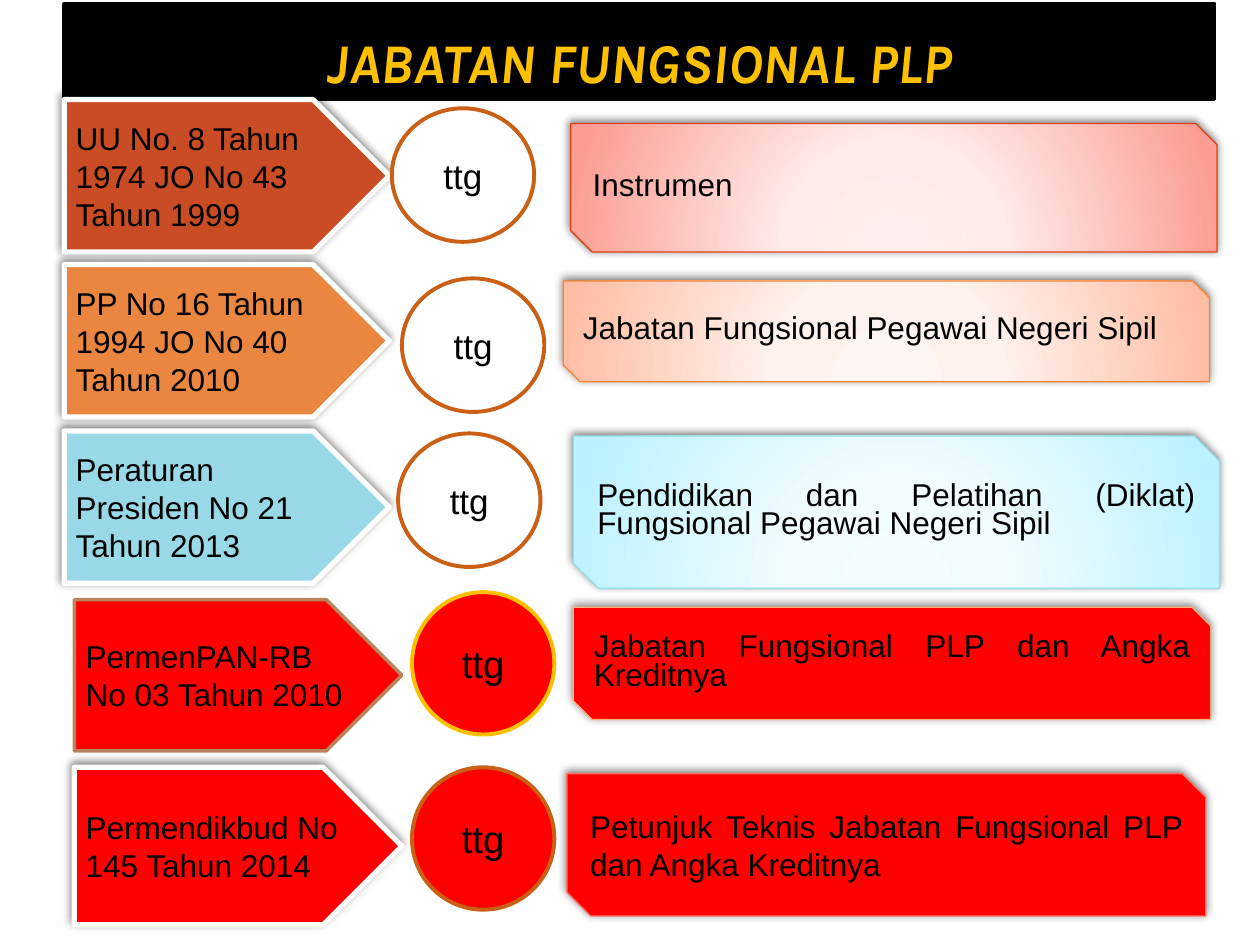
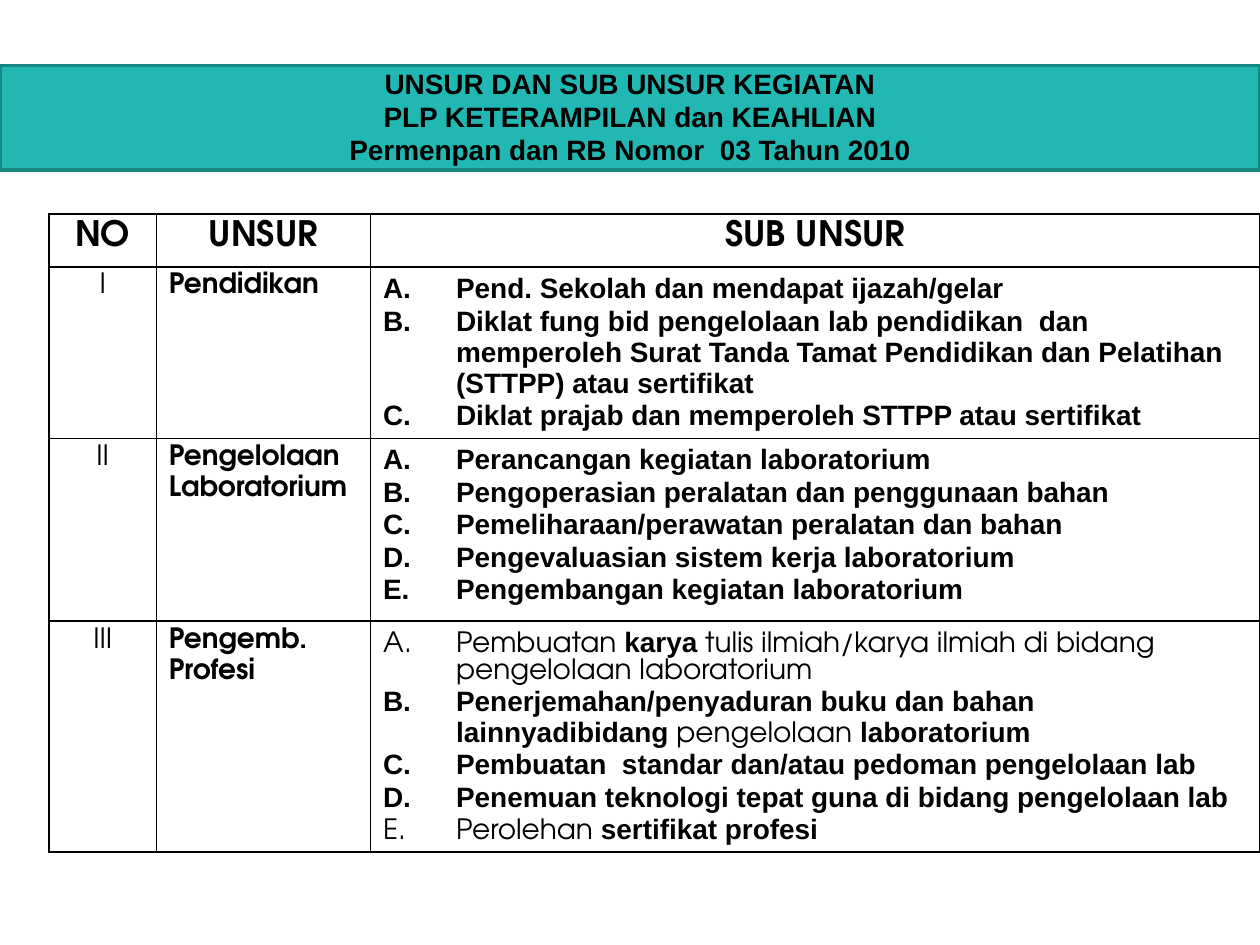
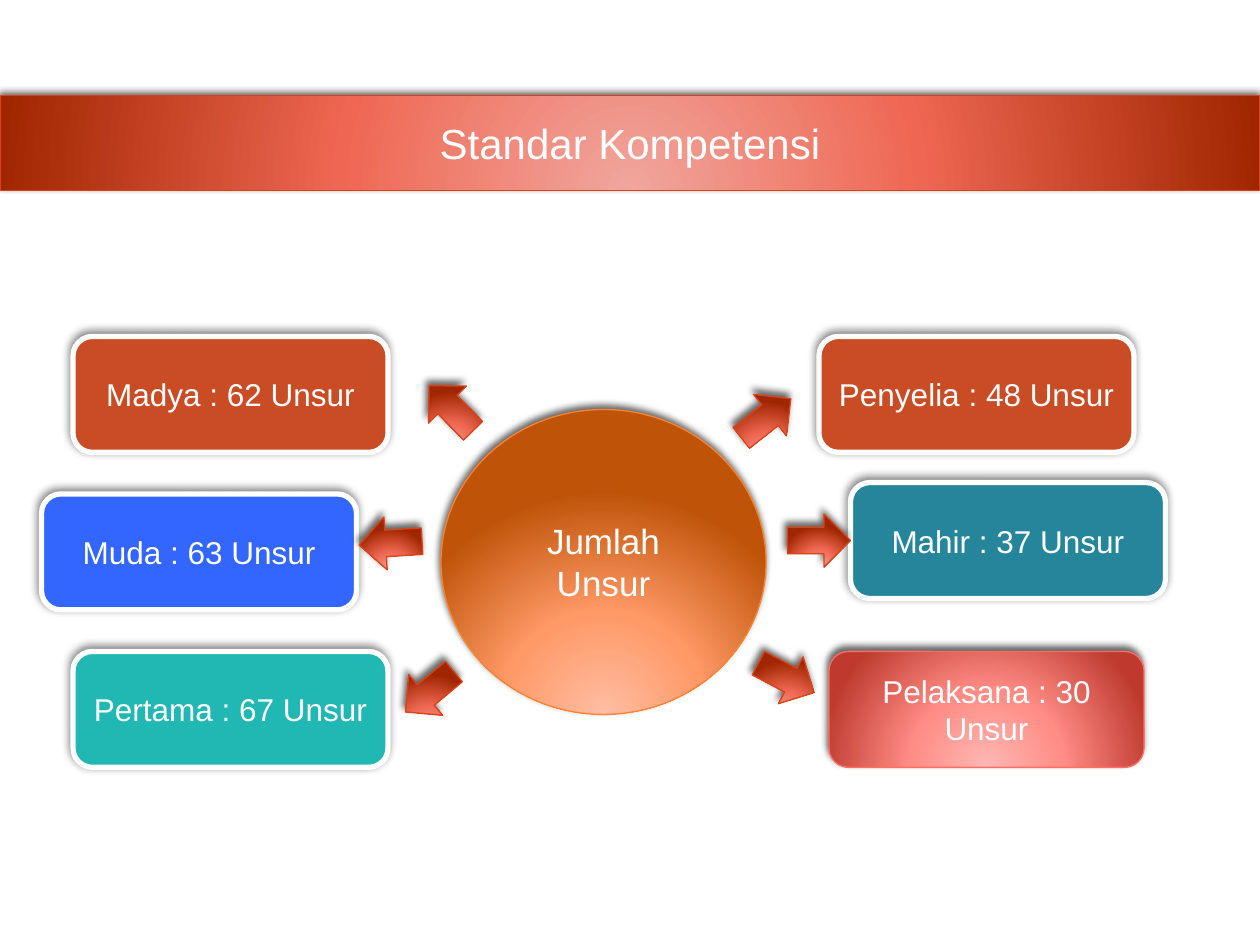
import dataclasses

import lxml.etree
import pptx
import pptx.dml.color
import pptx.enum.shapes
import pptx.enum.text
import pptx.oxml
import pptx.oxml.ns
import pptx.util

Inches = pptx.util.Inches
Pt = pptx.util.Pt
SHAPES = pptx.enum.shapes.MSO_SHAPE
ALIGN = pptx.enum.text.PP_ALIGN
ANCHOR = pptx.enum.text.MSO_ANCHOR


@dataclasses.dataclass(frozen=True)
class Theme:
    # Fonts
    body_font: str = "Arial"
    title_font: str = "Karla"
    table_font: str = "TeX Gyre Adventor"
    # Colours
    black: str = "000000"
    white: str = "FFFFFF"
    gold: str = "FFC000"
    red: str = "FF0000"
    rust: str = "C94C25"
    orange: str = "EA8640"
    sky: str = "99D9E7"
    teal: str = "21B8B3"
    teal_edge: str = "188884"
    blue: str = "3366FF"
    petrol: str = "25869B"
    ring: str = "C96016"
    brown: str = "B9835B"
    flame_edge: str = "D94315"
    orange_edge: str = "FB832F"
    sky_edge: str = "91DEEF"
    peach_edge: str = "FFB076"
    coral_edge: str = "FF6E62"
    # Gradients: (position in percent, colour)
    pale_red: tuple = ((0, "FFF0EF"), (34, "FFEBE9"), (100, "FB9D92"))
    pale_orange: tuple = ((0, "FFF5F2"), (34, "FFF2ED"), (100, "FFBDA3"))
    pale_sky: tuple = ((0, "F5FDFF"), (34, "F1FCFF"), (100, "BCF2FF"))
    deep_orange: tuple = ((0, "FFBDA3"), (46, "FF9966"), (100, "BF5409"))
    deep_coral: tuple = ((0, "FFB7B3"), (46, "FF8C85"), (100, "BE3A2F"))
    flame: tuple = ((0, "F0A69D"), (46, "EF6752"), (100, "A02600"))
    # Shadows: opacity in percent, blur and distance in points
    soft_shadow: tuple = (50, 5, 2)
    strong_shadow: tuple = (60, 4, 3)
    # Type sizes
    headline: int = 32
    banner: int = 24
    large: int = 22
    medium: int = 20
    normal: int = 18
    small: int = 16


THEME = Theme()


# ---- Formatting helpers ----

def apply_format(target, values):
    for name, value in values.items():
        setattr(target, name, value)


def rgb(colour):
    return pptx.dml.color.RGBColor.from_string(colour)


def add_element(parent, tag, **attributes):
    element = lxml.etree.SubElement(parent, pptx.oxml.ns.qn(tag))
    for name, value in attributes.items():
        element.set(name, str(value))
    return element


def set_fill(shape, fill):
    """Fill with nothing, one colour, or a circular gradient."""
    if fill is None:
        shape.fill.background()
    elif isinstance(fill, str):
        shape.fill.solid()
        shape.fill.fore_color.rgb = rgb(fill)
    else:
        shape.fill.gradient()
        gradient = shape._element.spPr.find(pptx.oxml.ns.qn("a:gradFill"))
        for child in list(gradient):
            gradient.remove(child)
        stops = add_element(gradient, "a:gsLst")
        for position, colour in fill:
            stop = add_element(stops, "a:gs", pos=position * 1000)
            add_element(stop, "a:srgbClr", val=colour)
        circle = add_element(gradient, "a:path", path="circle")
        add_element(circle, "a:fillToRect", l=110000, t=250000, r=110000, b=40000)


def set_shadow(shape, shadow):
    shape.shadow.inherit = False
    if shadow:
        opacity, blur, distance = shadow
        effects = shape._element.spPr.find(pptx.oxml.ns.qn("a:effectLst"))
        outer = add_element(effects, "a:outerShdw", blurRad=Pt(blur), dist=Pt(distance),
                            dir=245 * 60000, rotWithShape=0)
        colour = add_element(outer, "a:srgbClr", val=THEME.black)
        add_element(colour, "a:alpha", val=opacity * 1000)


def style_shape(shape, fill, line, width, shadow=None):
    set_fill(shape, fill)
    shape.line.color.rgb = rgb(line)
    shape.line.width = Pt(width)
    set_shadow(shape, shadow)


def add_run(paragraph, text, size, colour=THEME.black, font=THEME.body_font, **extra):
    run = paragraph.add_run()
    run.text = text
    apply_format(run.font, {"name": font, "size": Pt(size), **extra})
    run.font.color.rgb = rgb(colour)


def write_lines(shape, lines, size, align=ALIGN.CENTER, spacing=None, top=0.05, **style):
    frame = shape.text_frame
    apply_format(frame, {
        "word_wrap": True, "auto_size": pptx.enum.text.MSO_AUTO_SIZE.NONE,
        "vertical_anchor": ANCHOR.MIDDLE,
        "margin_left": Inches(0.09), "margin_right": Inches(0.09),
        "margin_top": Inches(top), "margin_bottom": Inches(0.05)})
    for index, line in enumerate(lines):
        paragraph = frame.add_paragraph() if index else frame.paragraphs[0]
        apply_format(paragraph, {"alignment": align, "line_spacing": spacing})
        add_run(paragraph, line, size, **style)


# ---- Elements ----

def add_box(slide, kind, box, fill, line, width, shadow=None):
    shape = slide.shapes.add_shape(kind, *map(Inches, box))
    style_shape(shape, fill, line, width, shadow)
    return shape


def add_titled_slide(presentation, box, fill, line, width, shadow=None):
    """Add a slide whose title is a coloured band."""
    slide = presentation.slides.add_slide(presentation.slide_layouts[5])
    title = slide.shapes.title
    apply_format(title, dict(zip(("left", "top", "width", "height"), map(Inches, box))))
    style_shape(title, fill, line, width, shadow)
    return slide, title


def add_regulation(slide, plate, ring, panel):
    """One row: regulation arrow, ring, and the subject it governs."""
    text, box, fill, line, width, shadow = plate
    shape = add_box(slide, SHAPES.PENTAGON, box, fill, line, width, shadow)
    write_lines(shape, [text], THEME.normal, ALIGN.LEFT)

    left, top, height, fill, line, size = ring
    shape = add_box(slide, SHAPES.OVAL, (left, top, 1.13, height), fill, line, 2.25)
    write_lines(shape, ["ttg"], size)

    text, box, fill, line, spacing = panel
    shape = add_box(slide, SHAPES.SNIP_2_DIAG_RECTANGLE, box, fill, line, 0.75,
                    THEME.soft_shadow)
    write_lines(shape, [text], THEME.normal, ALIGN.JUSTIFY, spacing)


def add_cell_borders(cell):
    properties = cell._tc.get_or_add_tcPr()
    for index, side in enumerate(("a:lnL", "a:lnR", "a:lnT", "a:lnB")):
        border = pptx.oxml.ns.qn(side)
        line = lxml.etree.Element(border, w=str(Pt(1)))
        add_element(add_element(line, "a:solidFill"), "a:srgbClr", val=THEME.black)
        properties.insert(index, line)


def fill_cell(cell, paragraphs, size, align=ALIGN.LEFT, gap=3.2, lettered=False):
    """Each paragraph is a list of (text, font, bold) runs."""
    cell.fill.background()
    add_cell_borders(cell)
    frame = cell.text_frame
    for index, runs in enumerate(paragraphs):
        paragraph = frame.add_paragraph() if index else frame.paragraphs[0]
        paragraph.alignment = align
        if index:
            paragraph.space_before = Pt(gap)
        if lettered:
            properties = paragraph._p.get_or_add_pPr()
            properties.set("marL", str(Inches(0.58)))
            properties.set("indent", str(Inches(-0.58)))
            add_element(properties, "a:buFont", typeface="+mj-lt")
            add_element(properties, "a:buAutoNum", type="alphaUcPeriod")
        for text, font, bold in runs:
            add_run(paragraph, text, size, font=font, bold=bold)


def strong(text):
    return text, THEME.body_font, True


def light(text):
    return text, THEME.table_font, False


def heading(text):
    return text, THEME.table_font, True


# ---- Slides ----

def build_regulations(presentation):
    slide, title = add_titled_slide(presentation, (0.51, 0.03, 9.13, 0.76),
                                    THEME.black, THEME.black, 2)
    write_lines(title, ["JABATAN FUNGSIONAL PLP"], THEME.headline, top=0.2,
                colour=THEME.gold, font=THEME.title_font, bold=True, italic=True)
    framed = (THEME.white, 3, THEME.soft_shadow)
    plain_ring = (1.06, None, THEME.ring, THEME.medium)
    rows = [
        (("UU No. 8 Tahun 1974 JO No 43 Tahun 1999", (0.51, 0.79, 2.58, 1.21),
          THEME.rust, *framed),
         (3.11, 0.86, *plain_ring),
         ("Instrumen", (4.53, 0.98, 5.13, 1.02), THEME.pale_red, THEME.flame_edge, 0.75)),
        (("PP No 16 Tahun 1994 JO No 40 Tahun 2010", (0.51, 2.1, 2.58, 1.21),
          THEME.orange, *framed),
         (3.19, 2.21, *plain_ring),
         ("Jabatan Fungsional Pegawai Negeri Sipil", (4.47, 2.23, 5.13, 0.8),
          THEME.pale_orange, THEME.orange_edge, 0.75)),
        (("Peraturan Presiden No 21 Tahun 2013", (0.51, 3.42, 2.58, 1.21),
          THEME.sky, *framed),
         (3.16, 3.44, *plain_ring),
         ("Pendidikan dan Pelatihan (Diklat) Fungsional Pegawai Negeri Sipil",
          (4.55, 3.46, 5.13, 1.21), THEME.pale_sky, THEME.sky_edge, 0.75)),
        (("PermenPAN-RB No 03 Tahun 2010", (0.59, 4.76, 2.6, 1.2),
          THEME.red, THEME.brown, 2, None),
         (3.27, 4.7, 1.13, THEME.red, THEME.gold, THEME.large),
         ("Jabatan Fungsional PLP dan Angka Kreditnya", (4.55, 4.82, 5.06, 0.89),
          THEME.red, THEME.peach_edge, 0.75)),
        (("Permendikbud No 145 Tahun 2014", (0.59, 6.09, 2.6, 1.25),
          THEME.red, *framed),
         (3.27, 6.09, 1.13, THEME.red, THEME.ring, THEME.large),
         ("Petunjuk Teknis Jabatan Fungsional PLP dan Angka Kreditnya",
          (4.5, 6.14, 5.07, 1.13), THEME.red, THEME.coral_edge, None)),
    ]
    for plate, ring, panel in rows:
        add_regulation(slide, plate, ring, panel)


def build_elements_table(presentation):
    slide, title = add_titled_slide(presentation, (0, 0.52, 10, 0.83),
                                    THEME.teal, THEME.teal_edge, 2)
    write_lines(title, ["UNSUR DAN SUB UNSUR KEGIATAN",
                        "PLP KETERAMPILAN dan KEAHLIAN",
                        "Permenpan dan RB Nomor  03 Tahun 2010"],
                THEME.small, spacing=0.97, top=0.05, bold=True)

    headers = ["NO", "UNSUR", "SUB UNSUR"]
    rows = [
        ("I", ["Pendidikan"], [
            [strong("Pend. Sekolah dan mendapat ijazah/gelar")],
            [strong("Diklat fung bid pengelolaan lab pendidikan  dan memperoleh Surat "
                    "Tanda Tamat Pendidikan dan Pelatihan (STTPP) atau sertifikat")],
            [strong("Diklat prajab dan memperoleh STTPP atau sertifikat")]]),
        ("II", ["Pengelolaan", "Laboratorium"], [
            [strong("Perancangan kegiatan laboratorium")],
            [strong("Pengoperasian peralatan dan penggunaan bahan")],
            [strong("Pemeliharaan/perawatan peralatan dan bahan")],
            [strong("Pengevaluasian sistem kerja laboratorium")],
            [strong("Pengembangan kegiatan laboratorium")]]),
        ("III", ["Pengemb.", "Profesi"], [
            [light("Pembuatan "), strong("karya"),
             light(" tulis ilmiah/karya ilmiah di bidang pengelolaan laboratorium")],
            [strong("Penerjemahan/penyaduran buku dan bahan lainnyadibidang "),
             light("pengelolaan"), strong(" laboratorium")],
            [strong("Pembuatan  standar dan/atau pedoman pengelolaan lab")],
            [strong("Penemuan teknologi tepat guna di bidang pengelolaan lab")],
            [light("Perolehan "), strong("sertifikat profesi")]]),
    ]
    widths = [0.85, 1.7, 7.06]
    heights = [0.42, 1.36, 1.45, 1.83]
    table = slide.shapes.add_table(len(heights), len(widths), Inches(0.39), Inches(1.7),
                                   Inches(sum(widths)), Inches(sum(heights))).table
    apply_format(table, {"first_row": False, "horz_banding": False})
    for column, width in zip(table.columns, widths):
        column.width = Inches(width)
    for row, height in zip(table.rows, heights):
        row.height = Inches(height)

    for index, text in enumerate(headers):
        fill_cell(table.cell(0, index), [[heading(text)]], THEME.medium, ALIGN.CENTER)
    for index, (number, element, details) in enumerate(rows, start=1):
        fill_cell(table.cell(index, 0), [[light(number)]], THEME.small, ALIGN.CENTER)
        fill_cell(table.cell(index, 1), [[heading(line)] for line in element], THEME.small)
        fill_cell(table.cell(index, 2), details, THEME.small, gap=0.8, lettered=True)


def build_competency(presentation):
    flame = (THEME.flame, THEME.flame_edge, 0.75, THEME.strong_shadow)
    slide, title = add_titled_slide(presentation, (0, 0.76, 10, 0.75), *flame)
    write_lines(title, ["Standar Kompetensi"], THEME.banner, colour=THEME.white)

    # Hub
    hub = add_box(slide, SHAPES.OVAL, (3.5, 3.25, 2.58, 2.42), THEME.deep_orange,
                  THEME.orange_edge, 0.75, THEME.strong_shadow)
    write_lines(hub, ["Jumlah Unsur"], THEME.medium, colour=THEME.white)

    # Levels around the hub
    framed = (THEME.white, 3, THEME.soft_shadow)
    levels = [
        ("Penyelia : 48 Unsur", 6.5, 2.67, THEME.rust, *framed),
        ("Mahir : 37 Unsur", 6.75, 3.83, THEME.petrol, *framed),
        ("Pelaksana : 30 Unsur", 6.58, 5.17, THEME.deep_coral, THEME.coral_edge, 0.75,
         THEME.strong_shadow),
        ("Pertama : 67 Unsur", 0.58, 5.17, THEME.teal, *framed),
        ("Muda : 63 Unsur", 0.33, 3.92, THEME.blue, *framed),
        ("Madya : 62 Unsur", 0.58, 2.67, THEME.rust, *framed),
    ]
    for text, left, top, *style in levels:
        level = add_box(slide, SHAPES.ROUNDED_RECTANGLE, (left, top, 2.5, 0.92), *style)
        write_lines(level, [text], THEME.normal, colour=THEME.white)

    # Arrows from the hub to the levels
    arrows = [(5.87, 3.07, 51.6), (6.29, 4.04, 90), (6.03, 5.13, 117.8),
              (3.37, 2.99, 315.7), (2.89, 4.06, 266.5), (3.2, 5.24, 230.2)]
    for left, top, rotation in arrows:
        arrow = add_box(slide, SHAPES.UP_ARROW, (left, top, 0.42, 0.5), *flame)
        arrow.rotation = rotation


def main():
    presentation = pptx.Presentation()
    apply_format(presentation, {"slide_width": Inches(10), "slide_height": Inches(7.5)})
    build_regulations(presentation)
    build_elements_table(presentation)
    build_competency(presentation)
    presentation.save("out.pptx")


if __name__ == "__main__":
    main()
